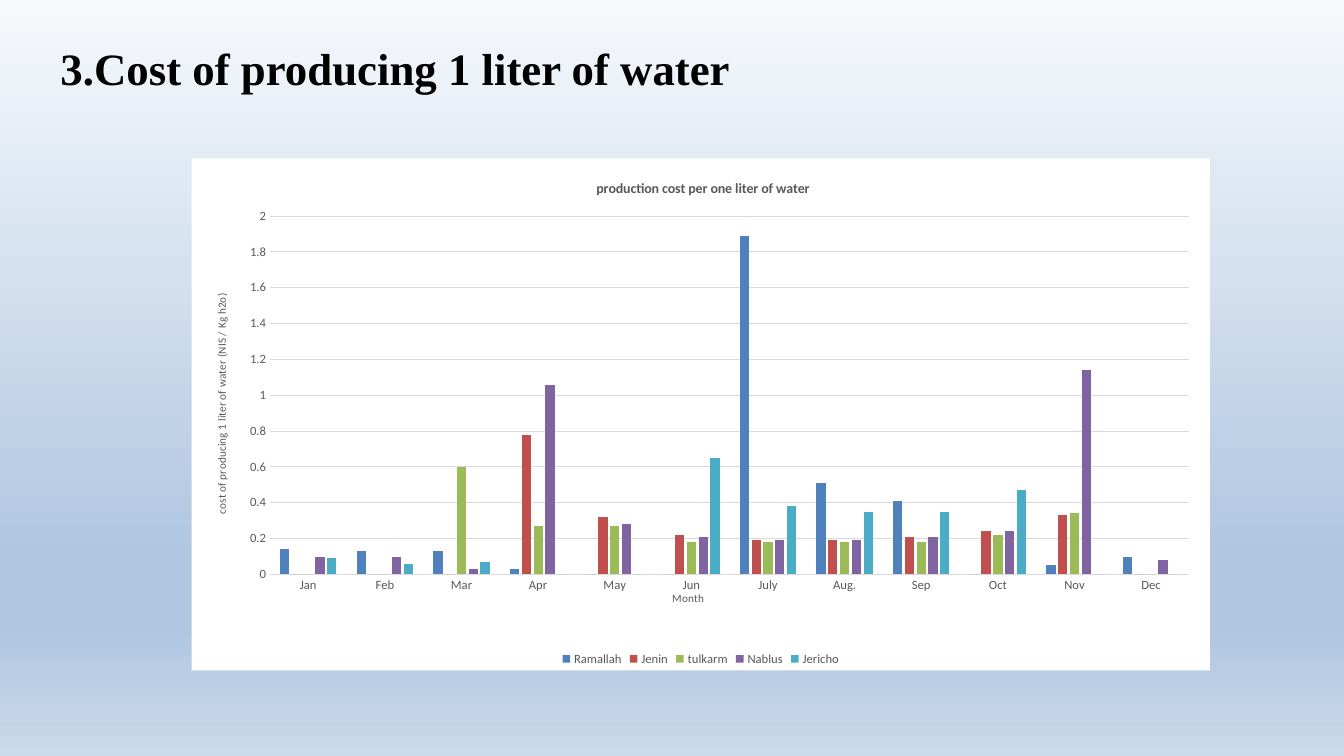
import pptx
import pptx.chart.data
import pptx.dml.color
import pptx.enum.chart
import pptx.enum.dml
import pptx.enum.text
import pptx.oxml
import pptx.oxml.ns
import pptx.util
import lxml.etree

Inches, Pt = pptx.util.Inches, pptx.util.Pt
qn = pptx.oxml.ns.qn
COLORS = {
    "ink": "000000", "text": "595959", "grid": "D9D9D9", "panel": "FFFFFF",
    "Ramallah": "4F81BD", "Jenin": "C0504D", "tulkarm": "9BBB59",
    "Nablus": "8064A2", "Jericho": "4BACC6",
}
SKY = [(0, "F6F9FC"), (74, "B0C6E1"), (83, "B0C6E1"), (100, "CAD9EB")]
MONTHS = ["Jan", "Feb", "Mar", "Apr", "May", "Jun",
          "July", "Aug.", "Sep", "Oct", "Nov", "Dec"]
COSTS = {
    "Ramallah": [0.14, 0.13, 0.13, 0.03, 0, 0, 1.89, 0.51, 0.41, 0, 0.05, 0.1],
    "Jenin": [0, 0, 0, 0.78, 0.32, 0.22, 0.19, 0.19, 0.21, 0.24, 0.33, 0],
    "tulkarm": [0, 0, 0.6, 0.27, 0.27, 0.18, 0.18, 0.18, 0.18, 0.22, 0.34, 0],
    "Nablus": [0.1, 0.1, 0.03, 1.06, 0.28, 0.21, 0.19, 0.19, 0.21, 0.24, 1.14, 0.08],
    "Jericho": [0.09, 0.06, 0.07, 0, 0, 0.65, 0.38, 0.35, 0.35, 0.47, 0, 0],
}


def rgb(name):
    return pptx.dml.color.RGBColor.from_string(COLORS[name])


def style(font, size, color="text", bold=False, face="Calibri"):
    font.name, font.size, font.bold = face, Pt(size), bold
    font.color.rgb = rgb(color)


def place(part, **spots):
    """Fix a chart part at fractions of the chart's width and height."""
    old = part.find(qn("c:layout"))
    if old is not None:
        part.remove(old)
    layout = lxml.etree.Element(qn("c:layout"))
    manual = lxml.etree.SubElement(layout, qn("c:manualLayout"))
    if "w" in spots:
        lxml.etree.SubElement(manual, qn("c:layoutTarget"), val="inner")
    for key in ("x", "y"):
        lxml.etree.SubElement(manual, qn(f"c:{key}Mode"), val="edge")
    for key, spot in spots.items():
        lxml.etree.SubElement(manual, qn(f"c:{key}"), val=str(spot))
    part.insert(0 if part.find(qn("c:tx")) is None else 1, layout)


def label(title, text, size, x, y, bold=False):
    title.text_frame.text = text
    style(title.text_frame.paragraphs[0].runs[0].font, size, bold=bold)
    place(title._element, x=x, y=y)


def paint(slide):
    """Fill the background from top to bottom."""
    fill = slide.background.fill
    fill.gradient()
    fill.gradient_angle = 270
    stops = slide._element.find(".//" + qn("a:gsLst"))
    for stop in list(stops):
        stops.remove(stop)
    for spot, color in SKY:
        stop = lxml.etree.SubElement(stops, qn("a:gs"), pos=str(spot * 1000))
        lxml.etree.SubElement(stop, qn("a:srgbClr"), val=color)


def head(slide, left, top, width, height):
    title = slide.shapes.title
    title.left, title.top, title.width, title.height = left, top, width, height
    frame = title.text_frame
    frame.text = "3.Cost of producing 1 liter of water"
    frame.word_wrap = True
    frame.auto_size = pptx.enum.text.MSO_AUTO_SIZE.NONE
    frame.vertical_anchor = pptx.enum.text.MSO_ANCHOR.TOP
    frame.margin_left = Inches(0.6)
    para = frame.paragraphs[0]
    para.alignment = pptx.enum.text.PP_ALIGN.LEFT
    para.line_spacing = 0.9
    style(para.runs[0].font, 32, "ink", True, "Times New Roman")


def panel(chart):
    """Give the chart area a plain fill without a border."""
    shape = lxml.etree.Element(qn("c:spPr"))
    fill = lxml.etree.SubElement(shape, qn("a:solidFill"))
    lxml.etree.SubElement(fill, qn("a:srgbClr"), val=COLORS["panel"])
    line = lxml.etree.SubElement(shape, qn("a:ln"))
    lxml.etree.SubElement(line, qn("a:noFill"))
    chart._chartSpace.find(qn("c:txPr")).addprevious(shape)


def axes(chart):
    months, costs = chart.category_axis, chart.value_axis
    for axis in (months, costs):
        axis.major_tick_mark = pptx.enum.chart.XL_TICK_MARK.NONE
        axis.minor_tick_mark = pptx.enum.chart.XL_TICK_MARK.NONE
        style(axis.tick_labels.font, 9)
    costs.minimum_scale, costs.maximum_scale, costs.major_unit = 0, 2, 0.2
    costs.has_major_gridlines = True
    costs.format.line.fill.background()
    for part in (months, costs.major_gridlines):
        part.format.line.color.rgb = rgb("grid")
        part.format.line.width = Pt(0.75)
    label(months.axis_title, "Month", 8, 0.47, 0.84)
    label(costs.axis_title, "cost of producing 1 liter of water (NIS / Kg h2o)",
          8, 0.02, 0.26)


def graph(slide, left, top, width, height):
    data = pptx.chart.data.CategoryChartData()
    data.categories = MONTHS
    for town, costs in COSTS.items():
        data.add_series(town, costs)
    kind = pptx.enum.chart.XL_CHART_TYPE.COLUMN_CLUSTERED
    chart = slide.shapes.add_chart(kind, left, top, width, height, data).chart
    style(chart.font, 10, "ink")
    panel(chart)
    label(chart.chart_title, "production cost per one liter of water",
          10, 0.395, 0.035, True)
    axes(chart)
    plot = chart.plots[0]
    plot.gap_width, plot.overlap, plot.vary_by_categories = 219, -27, False
    for series in plot.series:
        series.format.fill.solid()
        series.format.fill.fore_color.rgb = rgb(series.name)
        series.invert_if_negative = False
    place(chart._chartSpace.find(".//" + qn("c:plotArea")),
          x=0.077, y=0.113, w=0.903, h=0.7)
    chart.has_legend = True
    chart.legend.position = pptx.enum.chart.XL_LEGEND_POSITION.BOTTOM
    chart.legend.include_in_layout = False
    style(chart.legend.font, 9)


def main():
    deck = pptx.Presentation()
    deck.slide_width, deck.slide_height = Inches(13.33), Inches(7.5)
    slide = deck.slides.add_slide(deck.slide_layouts[5])
    paint(slide)
    head(slide, Inches(0), Inches(0.41), Inches(12), Inches(0.8))
    graph(slide, Inches(1.9), Inches(1.57), Inches(10.1), Inches(5.08))
    deck.save("out.pptx")


if __name__ == "__main__":
    main()
